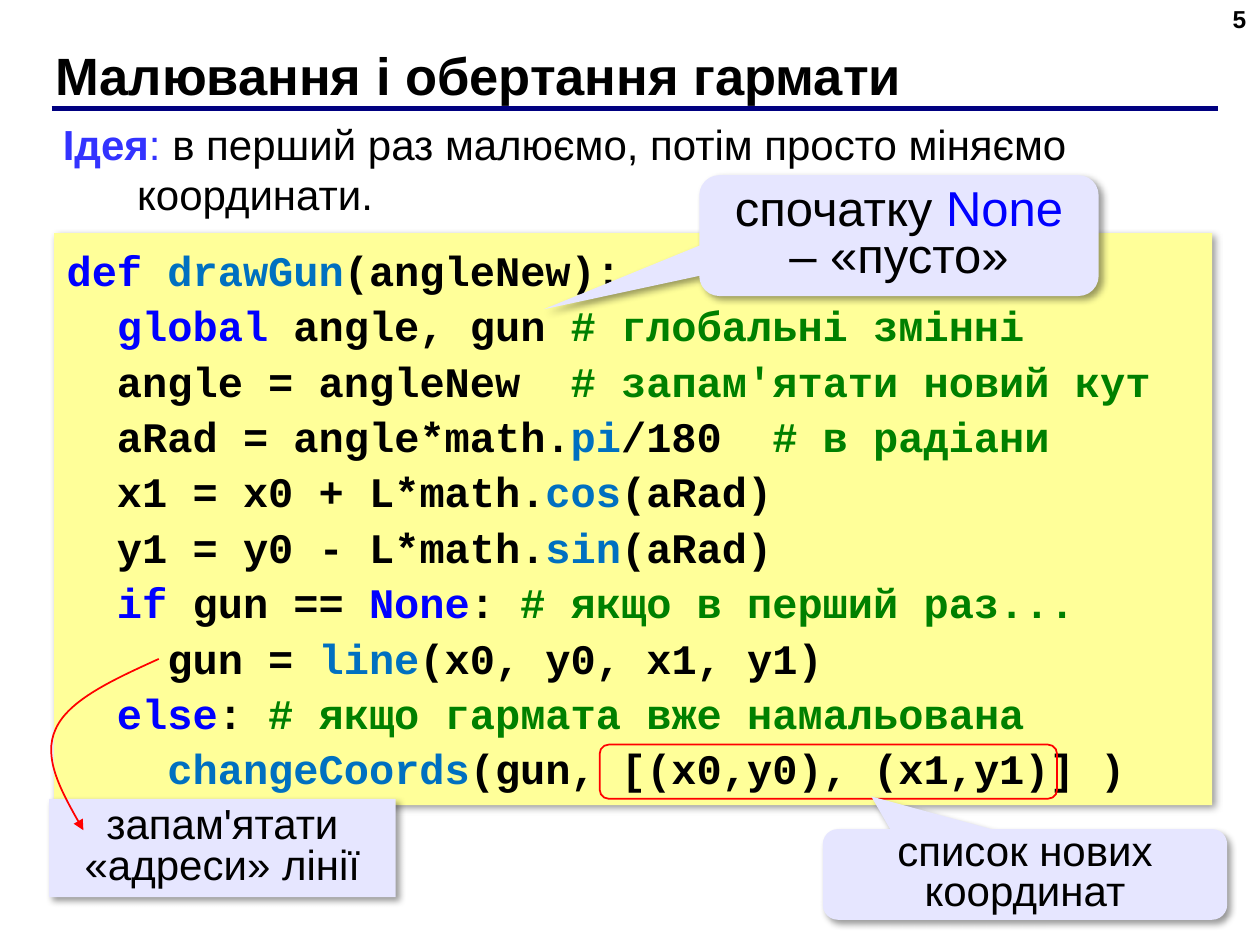
from pptx import Presentation
from pptx.dml.color import RGBColor
from pptx.enum.shapes import MSO_CONNECTOR, MSO_SHAPE
from pptx.enum.text import MSO_ANCHOR, PP_ALIGN
from pptx.oxml import parse_xml
from pptx.oxml.ns import nsdecls, qn
from pptx.util import Inches, Pt
from lxml import etree

RECT, ROUND = MSO_SHAPE.RECTANGLE, MSO_SHAPE.ROUNDED_RECTANGLE
CALLOUT = MSO_SHAPE.ROUNDED_RECTANGULAR_CALLOUT
STRAIGHT = MSO_CONNECTOR.STRAIGHT
TOP, MIDDLE = MSO_ANCHOR.TOP, MSO_ANCHOR.MIDDLE
LEFT, CENTER, RIGHT = PP_ALIGN.LEFT, PP_ALIGN.CENTER, PP_ALIGN.RIGHT

BLACK = RGBColor(0x00, 0x00, 0x00)
BLUE = RGBColor(0x00, 0x00, 0xFF)
CYAN = RGBColor(0x00, 0x70, 0xC0)
GREEN = RGBColor(0x00, 0x80, 0x00)
INDIGO = RGBColor(0x33, 0x33, 0xFF)
LILAC = RGBColor(0xE6, 0xE6, 0xFF)
NAVY = RGBColor(0x00, 0x00, 0x80)
RED = RGBColor(0xFF, 0x00, 0x00)
YELLOW = RGBColor(0xFF, 0xFF, 0x99)

WORDS = dict.fromkeys(["def", "global", "if", "else", "None"], BLUE)
WORDS.update(dict.fromkeys(
    ["drawGun", "pi", "cos", "sin", "line", "changeCoords"], CYAN))

CODE = [
    "def| |drawGun|(angleNew):",
    "  |global| angle, gun |# глобальні змінні",
    "  angle = angleNew  |# запам'ятати новий кут",
    "  aRad = angle*math.|pi|/180  |# в радіани",
    "  x1 = x0 + L*math.|cos|(aRad)",
    "  y1 = y0 - L*math.|sin|(aRad)",
    "  |if| gun == |None|: |# якщо в перший раз...",
    "    gun = |line|(x0, y0, x1, y1)",
    "  |else|: |# якщо гармата вже намальована",
    "    |changeCoords|(gun, [(x0,y0), (x1,y1)] )",
]


def place(box):
    """Turn a box in inches into lengths."""
    return [Inches(v) for v in box]


def style(para, size, name="Arial", bold=False, align=LEFT, space=None):
    """Set the font and layout of a paragraph."""
    para.font.size, para.font.name, para.font.bold = Pt(size), name, bold
    para.alignment, para.line_spacing = align, space


def write(para, parts):
    """Add coloured runs to a paragraph and return them."""
    runs = []
    for text, color in parts:
        run = para.add_run()
        run.text = text
        run.font.color.rgb = color
        runs.append(run)
    return runs


def label(slide, box, parts, size, anchor=TOP, **look):
    """Add a wrapped text box and return its paragraph and runs."""
    frame = slide.shapes.add_textbox(*place(box)).text_frame
    frame.word_wrap, frame.vertical_anchor = True, anchor
    para = frame.paragraphs[0]
    style(para, size, **look)
    return para, write(para, parts)


def panel(slide, kind, box, fill, anchor=MIDDLE):
    """Add a filled shape with a soft shadow."""
    shape = slide.shapes.add_shape(kind, *place(box))
    shape.fill.solid()
    shape.fill.fore_color.rgb = fill
    shape.line.fill.background()
    shape.text_frame.word_wrap = True
    shape.text_frame.vertical_anchor = anchor
    shape._element.spPr.append(parse_xml(
        f'<a:effectLst {nsdecls("a")}><a:outerShdw blurRad="{Pt(4)}" '
        f'dist="{Pt(3)}" dir="2700000" algn="tl" rotWithShape="0">'
        '<a:srgbClr val="000000"><a:alpha val="40000"/></a:srgbClr>'
        '</a:outerShdw></a:effectLst>'))
    return shape


def header(slide, box):
    """Draw the title, the page number and the rule."""
    x, y, w, h = box
    label(slide, (x, y, w, h), [("Малювання і обертання гармати", BLACK)],
          30, MIDDLE, bold=True)
    label(slide, (7.66, -0.02, 2.33, h), [("5", BLACK)], 14,
          bold=True, align=RIGHT)
    rule = slide.shapes.add_connector(
        STRAIGHT, *place((x + 0.07, y + 0.53, x + w + 0.17, y + 0.53)))
    rule.line.color.rgb, rule.line.width = NAVY, Pt(3)
    etree.SubElement(rule._element.spPr, qn("a:effectLst"))


def idea(slide, box):
    """Write the idea with a hanging indent."""
    para, runs = label(slide, box, [
        ("Ідея", INDIGO), (": ", INDIGO),
        ("в перший раз малюємо, потім просто міняємо координати.", BLACK),
    ], 24)
    runs[0].font.bold = True
    props = para._p.get_or_add_pPr()
    props.set("marL", str(Inches(0.59)))
    props.set("indent", str(-Inches(0.59)))


def code(slide, box):
    """Write the coloured listing on its panel."""
    frame = panel(slide, RECT, box, YELLOW, TOP).text_frame
    for i, row in enumerate(CODE):
        para = frame.add_paragraph() if i else frame.paragraphs[0]
        style(para, 24, "Courier New", True, space=1.1)
        write(para, [(part, GREEN if part.startswith("#")
                      else WORDS.get(part, BLACK))
                     for part in row.split("|")])


def note(slide, box, parts, size, tip=None):
    """Add a lilac note, with a pointer if a tip is given."""
    shape = panel(slide, CALLOUT if tip else RECT, box, LILAC)
    if tip:
        for i, value in enumerate((*tip, 0.167)):
            shape.adjustments[i] = value
    para = shape.text_frame.paragraphs[0]
    style(para, size, align=CENTER, space=0.8)
    write(para, parts)


def outline(shape):
    """Give a shape a thin red line and no fill."""
    shape.shadow.inherit = False
    shape.fill.background()
    shape.line.color.rgb, shape.line.width = RED, Pt(1)


def frame(slide, box):
    """Ring the list of points in red."""
    ring = slide.shapes.add_shape(ROUND, *place(box))
    ring.adjustments[0] = 0.167
    outline(ring)


def arrow(slide, box):
    """Draw a curved red arrow down the left of the box."""
    x, y, w, h = box
    knots = [(1, 0), (0.61, 0.12), (0.22, 0.24), (0.11, 0.41),
             (0, 0.57), (0.17, 0.79), (0.35, 1)]
    spots = [place((x + u * w, y + v * h)) for u, v in knots]
    build = slide.shapes.build_freeform(*spots[0])
    build.add_line_segments(spots[1:], close=False)
    shape = build.convert_to_shape()
    outline(shape)
    trace = shape._element.spPr.find(".//" + qn("a:path"))
    steps = trace.findall(qn("a:lnTo"))
    for i in range(0, len(steps), 3):
        curve = etree.SubElement(trace, qn("a:cubicBezTo"))
        for step in steps[i:i + 3]:
            curve.append(step[0])
            trace.remove(step)
    etree.SubElement(shape.line._get_or_add_ln(), qn("a:tailEnd"),
                     type="triangle")


def main():
    """Build and save the slide."""
    deck = Presentation()
    deck.slide_width, deck.slide_height = Inches(10), Inches(7.5)
    slide = deck.slides.add_slide(deck.slide_layouts[6])
    header(slide, (0.34, 0.33, 9.16, 0.52))
    code(slide, (0.43, 1.85, 9.19, 4.54))
    idea(slide, (0.4, 0.89, 9.2, 0.91))
    note(slide, (5.55, 1.39, 3.17, 0.96),
         [("спочатку ", BLACK), ("None", BLUE), (" – «пусто»", BLACK)],
         28, (-0.89, 0.61))
    note(slide, (0.39, 6.34, 2.75, 0.78),
         [("запам'ятати «адреси» лінії", BLACK)], 24)
    arrow(slide, (0.34, 5.23, 0.92, 1.36))
    frame(slide, (4.76, 5.91, 3.63, 0.43))
    note(slide, (6.53, 6.58, 3.21, 0.72),
         [("список нових координат", BLACK)], 24, (-0.38, -0.86))
    deck.save("out.pptx")


if __name__ == "__main__":
    main()
